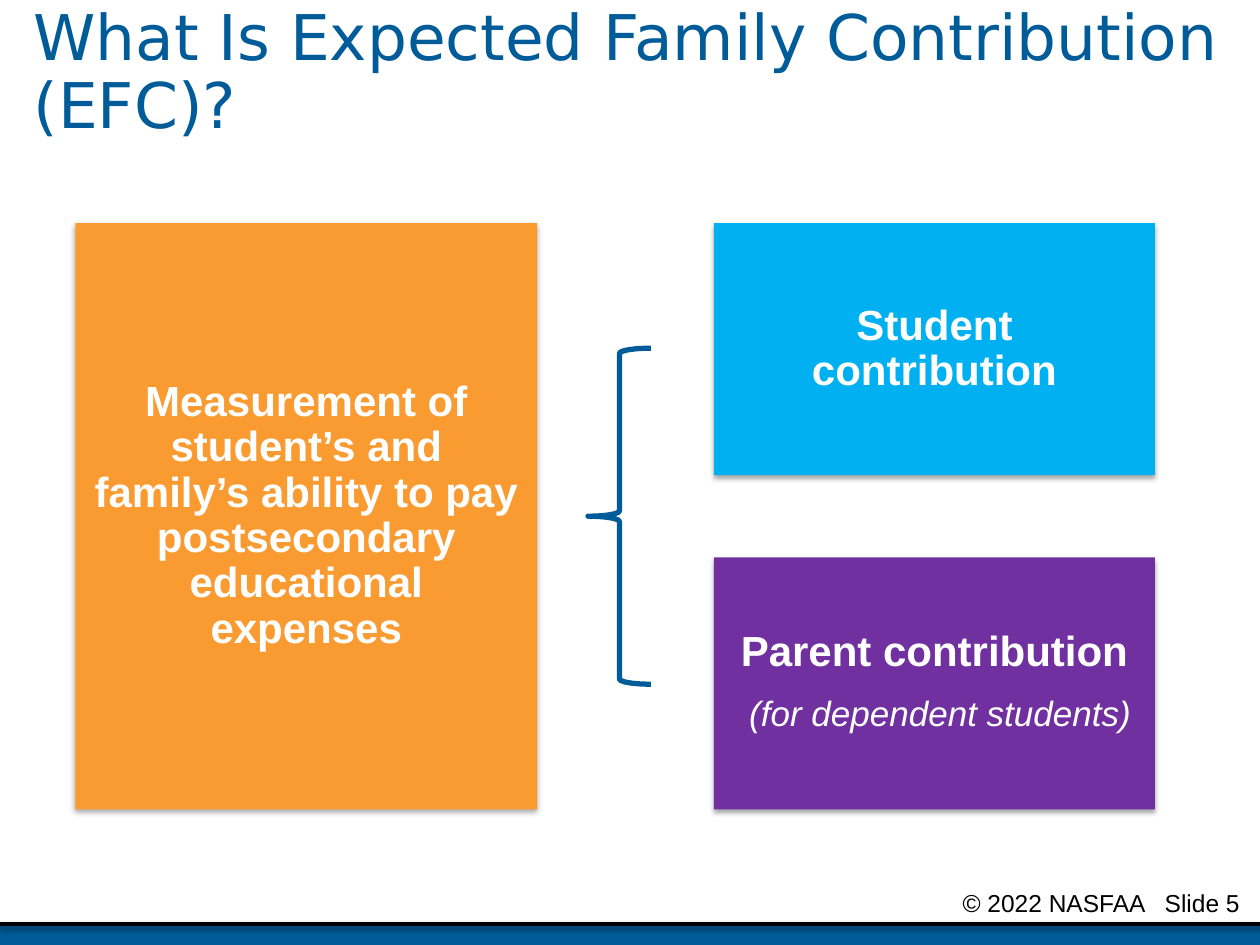
from dataclasses import dataclass

import pptx
import pptx.dml.color
import pptx.enum.shapes
import pptx.enum.text
import pptx.oxml
import pptx.oxml.ns
import pptx.util

Pt = pptx.util.Pt
Shapes = pptx.enum.shapes.MSO_SHAPE
Anchor = pptx.enum.text.MSO_ANCHOR
Align = pptx.enum.text.PP_ALIGN


@dataclass(frozen=True)
class Theme:
    blue: str = "005B99"
    orange: str = "FA9B32"
    cyan: str = "00B0F0"
    purple: str = "7030A0"
    white: str = "FFFFFF"
    black: str = "000000"
    title_font: str = "DejaVu Sans"
    body_font: str = "Arial"
    title_size: float = 36
    card_size: float = 24
    note_size: float = 20
    footer_size: float = 14


THEME = Theme()


def rgb(value):
    return pptx.dml.color.RGBColor.from_string(value)


def add_span(para, text, size, color, font=THEME.body_font, bold=False, italic=False):
    span = para.add_run()
    span.text = text
    span.font.name = font
    span.font.size = Pt(size)
    span.font.color.rgb = rgb(color)
    span.font.bold = bold
    span.font.italic = italic


def set_shadow(shape, alpha, blur, distance):
    """Give the shape a black shadow that falls straight down."""
    properties = shape._element.spPr
    for old in properties.findall(pptx.oxml.ns.qn("a:effectLst")):
        properties.remove(old)
    properties.append(pptx.oxml.parse_xml(
        f'<a:effectLst {pptx.oxml.ns.nsdecls("a")}>'
        f'<a:outerShdw blurRad="{Pt(blur)}" dist="{Pt(distance)}" dir="5400000" '
        f'algn="ctr" rotWithShape="0"><a:srgbClr val="{THEME.black}">'
        f'<a:alpha val="{alpha * 1000}"/></a:srgbClr></a:outerShdw></a:effectLst>'))


def add_block(page, left, top, width, height, color):
    block = page.shapes.add_shape(
        Shapes.RECTANGLE, Pt(left), Pt(top), Pt(width), Pt(height))
    block.shadow.inherit = False
    block.fill.solid()
    block.fill.fore_color.rgb = rgb(color)
    block.line.fill.background()
    return block


def add_title(page, left, top, width, height):
    title = page.shapes.title
    title.left, title.top, title.width, title.height = map(Pt, (left, top, width, height))
    frame = title.text_frame
    frame.word_wrap = True
    frame.auto_size = pptx.enum.text.MSO_AUTO_SIZE.NONE
    frame.vertical_anchor = Anchor.TOP
    para = frame.paragraphs[0]
    para.alignment = Align.LEFT
    para.line_spacing = 0.9
    para.space_before = Pt(0)
    add_span(para, "What Is Expected Family Contribution (EFC)?",
             THEME.title_size, THEME.blue, THEME.title_font)


def add_card(page, left, top, width, height, color, text, note=None):
    card = add_block(page, left, top, width, height, color)
    set_shadow(card, 35, 3.1, 1.8)
    frame = card.text_frame
    frame.word_wrap = True
    frame.vertical_anchor = Anchor.MIDDLE
    frame.margin_left = frame.margin_right = Pt(10.5)
    frame.margin_top = frame.margin_bottom = Pt(10.5)
    paras = [frame.paragraphs[0]]
    add_span(paras[0], text, THEME.card_size, THEME.white, bold=True)
    if note:
        paras.append(frame.add_paragraph())
        add_span(paras[1], " ", THEME.card_size, THEME.white)
        add_span(paras[1], note, THEME.note_size, THEME.white, italic=True)
    for para in paras:
        para.alignment = Align.CENTER
        para.line_spacing = 0.9
        para.space_after = Pt(0.35 * THEME.card_size)


def add_diagram(page, left, top, width, height):
    """Definition on the left, a brace, and its two parts stacked on the right."""
    part_width, part_height = 252, 144
    part_left = left + width - part_width
    add_card(page, left, top, 264, height, THEME.orange,
             "Measurement of student’s and family’s ability to pay "
             "postsecondary educational expenses")
    add_card(page, part_left, top, part_width, part_height, THEME.cyan,
             "Student contribution")
    add_card(page, part_left, top + height - part_height, part_width, part_height,
             THEME.purple, "Parent contribution", "(for dependent students)")

    brace_height = 192
    brace = page.shapes.add_shape(
        Shapes.LEFT_BRACE, Pt(part_left - 72), Pt(top + (height - brace_height) / 2),
        Pt(36), Pt(brace_height))
    brace.shadow.inherit = False
    brace.fill.background()
    brace.line.color.rgb = rgb(THEME.blue)
    brace.line.width = Pt(3)


def add_footer(page, left, top, width, height):
    band_top = top + 24
    add_block(page, left, band_top, width, top + height - band_top, THEME.blue)

    box = page.shapes.add_textbox(Pt(left + width - 270), Pt(top), Pt(270), Pt(18))
    frame = box.text_frame
    frame.word_wrap = True
    frame.margin_left = Pt(100)
    para = frame.paragraphs[0]
    para._p.get_or_add_pPr().append(pptx.oxml.parse_xml(
        f'<a:tabLst {pptx.oxml.ns.nsdecls("a")}>'
        f'<a:tab pos="{Pt(115.5)}" algn="l"/></a:tabLst>'))
    add_span(para, "© 2022 NASFAA\tSlide 5", THEME.footer_size, THEME.black)

    rule = page.shapes.add_connector(
        pptx.enum.shapes.MSO_CONNECTOR.STRAIGHT,
        Pt(left), Pt(band_top), Pt(left + width), Pt(band_top))
    rule.line.color.rgb = rgb(THEME.black)
    rule.line.width = Pt(2)
    set_shadow(rule, 38, 3.1, 1.6)


def main():
    deck = pptx.Presentation()
    deck.slide_width, deck.slide_height = Pt(720), Pt(540)
    page = deck.slides.add_slide(deck.slide_layouts.get_by_name("Title Only"))
    add_footer(page, 0, 504, 720, 36)
    add_diagram(page, 43, 127.5, 617, 335)
    add_title(page, 12, 0, 702, 90)
    deck.save("out.pptx")


if __name__ == "__main__":
    main()
